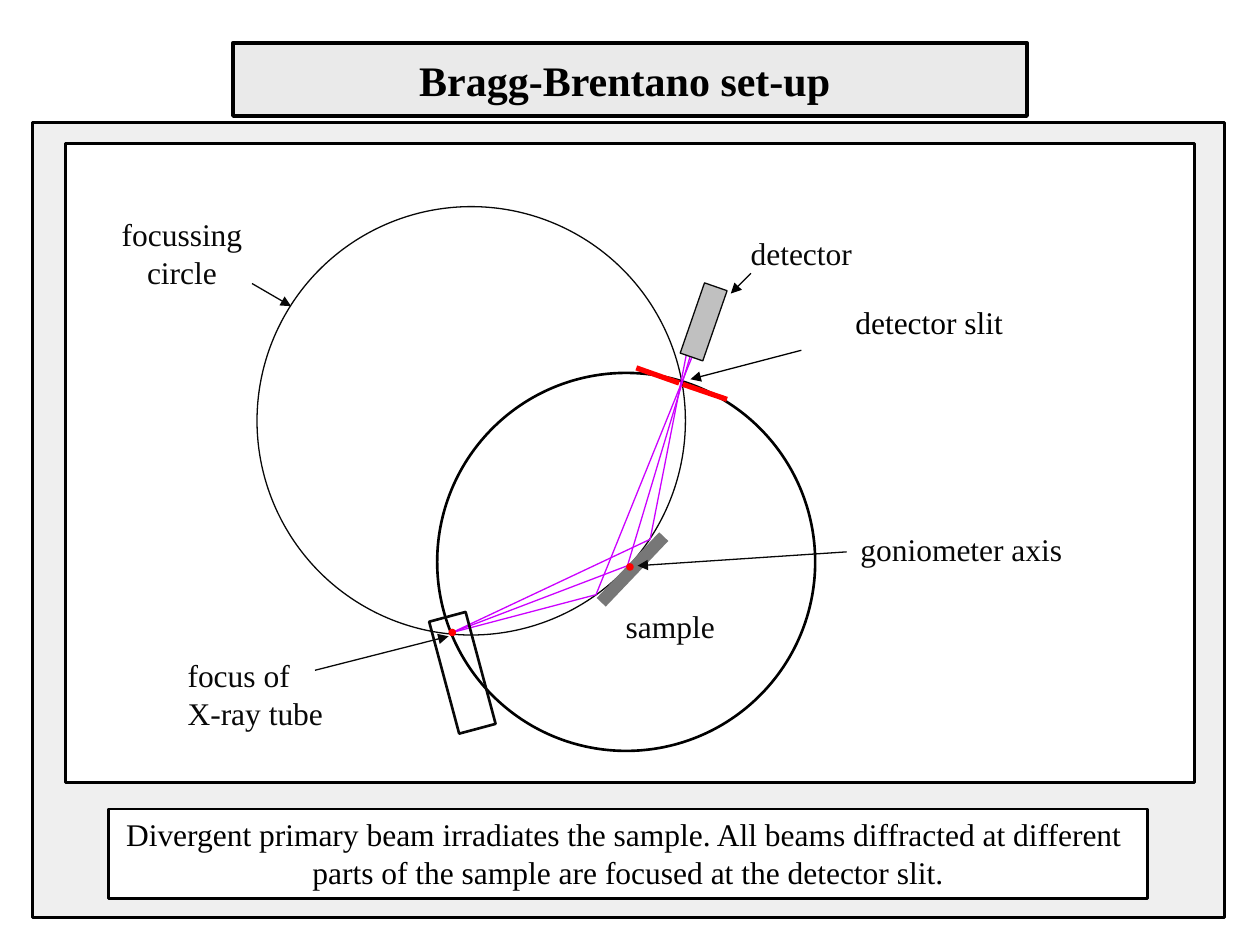
from lxml import etree
from pptx import Presentation
from pptx.dml.color import RGBColor
from pptx.enum import shapes, text
from pptx.oxml.ns import qn
from pptx.util import Inches, Pt

FONT = "Times New Roman"
BLACK, INK, WHITE = "000000", "080808", "FFFFFF"
RED, VIOLET = "FF0000", "CC00FF"
RECT, OVAL = shapes.MSO_SHAPE.RECTANGLE, shapes.MSO_SHAPE.OVAL
LEFT, CENTER = text.PP_ALIGN.LEFT, text.PP_ALIGN.CENTER


def rgb(value):
    """Turn a hex string into a colour."""
    return RGBColor.from_string(value)


def paint(sp, fill=None, line=None, width=0.75):
    """Set the fill and outline of a shape."""
    if fill:
        sp.fill.solid()
        sp.fill.fore_color.rgb = rgb(fill)
    else:
        sp.fill.background()
    if line:
        sp.line.color.rgb = rgb(line)
        sp.line.width = Pt(width)
    else:
        sp.line.fill.background()


def add_shape(slide, kind, box, fill=None, line=None, width=0.75, rotation=0):
    """Add a preset shape without a shadow."""
    sp = slide.shapes.add_shape(kind, *map(Inches, box))
    sp.shadow.inherit = False
    sp.rotation = rotation
    paint(sp, fill, line, width)
    return sp


def add_line(slide, start, end, color, width=0.75, arrow=False):
    """Add a straight line, with an arrowhead at its end if wanted."""
    line = slide.shapes.add_connector(
        shapes.MSO_CONNECTOR.STRAIGHT, *map(Inches, (*start, *end)))
    line.line.color.rgb = rgb(color)
    line.line.width = Pt(width)
    if arrow:
        etree.SubElement(line.line._get_or_add_ln(), qn("a:tailEnd"), type="triangle")
    etree.SubElement(line._element.spPr, qn("a:effectLst"))


def write(tf, lines, size, color, align, bold=False):
    """Write one paragraph for each line of text."""
    for i, words in enumerate(lines):
        p = tf.add_paragraph() if i else tf.paragraphs[0]
        p.alignment = align
        r = p.add_run()
        r.text = words
        r.font.name, r.font.size, r.font.bold = FONT, Pt(size), bold
        r.font.color.rgb = rgb(color)


def add_label(slide, box, lines, color=INK, align=CENTER, fill=WHITE, line=None):
    """Add a text box that fits its unwrapped text."""
    sp = slide.shapes.add_textbox(*map(Inches, box))
    paint(sp, fill, line, 1.5)
    tf = sp.text_frame
    tf.word_wrap = False
    tf.auto_size = text.MSO_AUTO_SIZE.SHAPE_TO_FIT_TEXT
    write(tf, lines, 18, color, align)


def add_title(slide, words):
    """Place and format the title placeholder."""
    sp = slide.shapes.title
    sp.left, sp.top, sp.width, sp.height = map(Inches, (1.85, 0.34, 6.3, 0.58))
    paint(sp, "EAEAEA", BLACK, 2.25)
    tf = sp.text_frame
    tf.auto_size = text.MSO_AUTO_SIZE.NONE
    tf.vertical_anchor = text.MSO_ANCHOR.MIDDLE
    write(tf, [words], 24, BLACK, CENTER, bold=True)


def add_dot(slide, x, y):
    """Mark a point with a small red dot."""
    add_shape(slide, OVAL, (x - 0.03, y - 0.03, 0.06, 0.06), RED)


def add_beams(slide):
    """Draw the rays from the tube focus by way of the sample to the detector."""
    focus = (3.59, 5.02)
    for hit, end in (((5.16, 4.28), (5.45, 2.8)),
                     ((4.73, 4.72), (5.49, 2.84)),
                     ((4.98, 4.49), (5.48, 2.82))):
        add_line(slide, focus, hit, VIOLET)
        add_line(slide, hit, end, VIOLET)


def add_setup(slide):
    """Draw the circles, sample, tube, detector and slit."""
    add_shape(slide, OVAL, (3.47, 2.96, 3, 3), WHITE, BLACK, 1.5)
    add_shape(slide, OVAL, (2.04, 1.64, 3.4, 3.4), line=INK)
    add_shape(slide, RECT, (4.66, 4.47, 0.72, 0.1), "777777", rotation=313.6)
    add_beams(slide)
    add_shape(slide, RECT, (3.52, 4.88, 0.3, 0.92), None, INK, 1.5, 345)
    add_dot(slide, 3.59, 5.02)
    add_shape(slide, RECT, (5.49, 2.26, 0.19, 0.59), "C0C0C0", INK, rotation=19.1)


def add_labels(slide):
    """Name the parts and point to them."""
    add_label(slide, (5.85, 1.81, 1.02, 0.4), ["detector"])
    add_label(slide, (1.39, 5.16, 1.29, 0.71), ["focus of", "X-ray tube"], align=LEFT)
    add_label(slide, (0.86, 1.66, 1.17, 0.71), ["focussing", "circle"])
    add_label(slide, (4.86, 4.77, 0.92, 0.4), ["sample"], fill=None)
    add_dot(slide, 5, 4.5)
    add_label(slide, (6.73, 4.16, 1.82, 0.4), ["goniometer axis"], align=LEFT)
    for start, end in (((5.05, 2.92), (5.39, 3.04)), ((5.42, 3.05), (5.77, 3.17))):
        add_line(slide, start, end, RED, 3)
    add_label(slide, (6.68, 2.36, 1.39, 0.4), ["detector slit"], BLACK)
    for start, end, color in (((2.5, 5.32), (3.56, 5.05), INK),
                              ((2, 2.25), (2.31, 2.43), INK),
                              ((6.72, 4.38), (5.06, 4.49), INK),
                              ((6.36, 2.78), (5.48, 3.01), BLACK),
                              ((5.96, 2.17), (5.8, 2.33), BLACK)):
        add_line(slide, start, end, color, arrow=True)


def main():
    """Build the slide and save it."""
    prs = Presentation()
    prs.slide_width, prs.slide_height = Inches(10), Inches(7.5)
    slide = prs.slides.add_slide(prs.slide_layouts[5])
    add_title(slide, "Bragg-Brentano set-up ")
    add_shape(slide, RECT, (0.26, 0.97, 9.46, 6.31), "EFEFEF", BLACK, 1.5)
    add_shape(slide, RECT, (0.52, 1.14, 8.96, 5.07), WHITE, BLACK, 1.5)
    add_setup(slide)
    add_labels(slide)
    add_label(slide, (0.86, 6.42, 8.25, 0.71), [
        "Divergent primary beam irradiates the sample. All beams diffracted at different ",
        "parts of the sample are focused at the detector slit."], BLACK, line=BLACK)
    prs.save("out.pptx")


if __name__ == "__main__":
    main()
